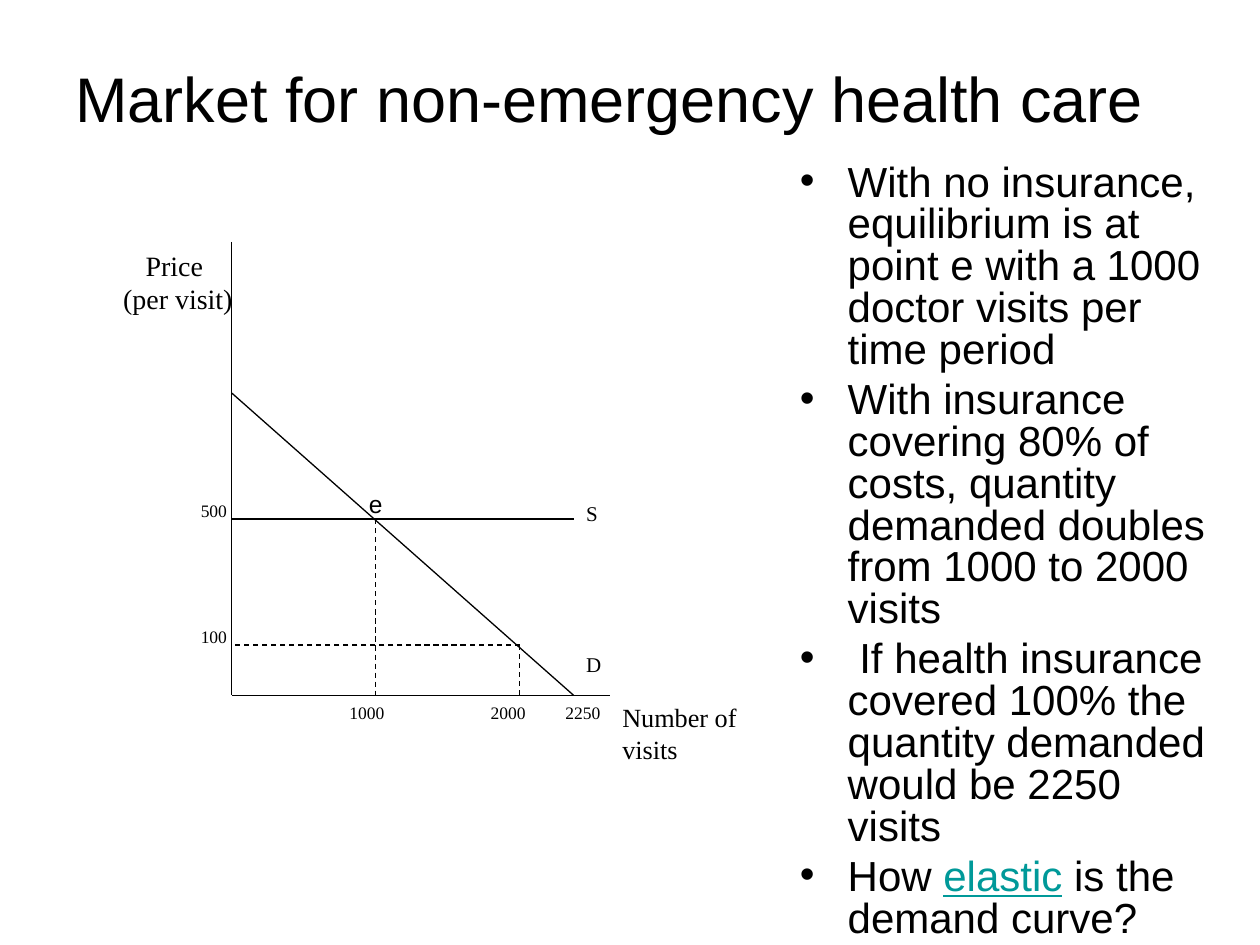
from pptx import Presentation, util as u
from pptx.dml.color import RGBColor
from pptx.enum import dml, shapes, text
from pptx.oxml.ns import qn
from lxml import etree

WIDE, HIGH = 10, 7.5
LEFT, TOP, COL, ROW = 1.84, 1.92, 1 / 7, 0.2
SANS, SERIF = "Arial", "Times New Roman"
BLACK, TEAL = "000000", "009999"
L, C, R = text.PP_ALIGN.LEFT, text.PP_ALIGN.CENTER, text.PP_ALIGN.RIGHT

TITLE = "Market for non-emergency health care"
POINTS = [
    ["With no insurance, equilibrium is at point e with a 1000 doctor visits per time period"],
    ["With insurance covering 80% of costs, quantity demanded doubles from 1000 to 2000 visits"],
    [" If health insurance covered 100% the quantity demanded would be 2250 visits"],
    ["How ", "elastic", " is the demand curve?"],
]
# (from column, row, to column, row, dashed)
LINES = [
    (0, 0, 0, 18, False),
    (0, 18, 21, 18, False),
    (0, 11, 19, 11, False),
    (0, 6, 19, 18, False),
    (8, 11, 8, 18, True),
    (16, 16, 16, 18, True),
    (16, 16, 0, 16, True),
]
# (words, column, row, columns, rows, size, alignment)
LABELS = [
    ("Number of visits", 21, 18, 11, 2, 15, L),
    ("Price \n(per visit)", -7, 0, 8, 5, 16, C),
    ("S", 19, 10, 3, 3, 12, L),
    ("D", 19, 16, 3, 2, 12, L),
    ("500", -3, 10, 4, 2, 10, C),
    ("100", -3, 15, 4, 2, 10, C),
    ("1000", 5, 18, 5, 2, 10, C),
    ("2000", 13, 18, 4, 2, 10, R),
    ("2250", 17, 18, 5, 2, 10, C),
]


def paint(code):
    return RGBColor.from_string(code)


def spot(col, row):
    return u.Inches(LEFT + col * COL), u.Inches(TOP + row * ROW)


def style(run, size, face, code=BLACK):
    run.font.size = u.Pt(size)
    run.font.name = face
    run.font.color.rgb = paint(code)


def write(slide, words, area, size, face, side=L, wrap=True):
    frame = slide.shapes.add_textbox(*area).text_frame
    frame.word_wrap = wrap
    frame.text = words
    for para in frame.paragraphs:
        para.alignment = side
        for run in para.runs:
            style(run, size, face)
    return frame


def draw(slide, x1, y1, x2, y2, dashed):
    line = slide.shapes.add_connector(
        shapes.MSO_CONNECTOR.STRAIGHT, *spot(x1, y1), *spot(x2, y2))
    line.line.color.rgb = paint(BLACK)
    line.line.width = u.Pt(0.75)
    if dashed:
        line.line.dash_style = dml.MSO_LINE.DASH
    etree.SubElement(line._element.spPr, qn("a:effectLst"))


def bullet(para):
    props = para._p.get_or_add_pPr()
    props.set("marL", str(u.Inches(0.38)))
    props.set("indent", str(u.Inches(-0.38)))
    etree.SubElement(props, qn("a:buFont")).set("typeface", SANS)
    etree.SubElement(props, qn("a:buChar")).set("char", "•")


def listing(slide, area):
    frame = slide.shapes.add_textbox(*area).text_frame
    frame.word_wrap = True
    for i, parts in enumerate(POINTS):
        para = frame.add_paragraph() if i else frame.paragraphs[0]
        para.line_spacing = 0.83
        para.space_before = u.Pt(4.8)
        bullet(para)
        for part in parts:
            run = para.add_run()
            run.text = part
            link = part == "elastic"
            style(run, 24, SANS, TEAL if link else BLACK)
            run.font.underline = link


def main():
    deck = Presentation()
    deck.slide_width, deck.slide_height = u.Inches(WIDE), u.Inches(HIGH)
    slide = deck.slides.add_slide(deck.slide_layouts[6])

    listing(slide, [u.Inches(n) for n in (6.25, 1.25, 3.5, 6.17)])
    head = write(slide, TITLE, [u.Inches(n) for n in (0.5, 0.3, 9, 0.95)], 36, SANS)
    head.vertical_anchor = text.MSO_ANCHOR.MIDDLE

    for line in LINES:
        draw(slide, *line)
    for words, col, row, cols, rows, size, side in LABELS:
        area = *spot(col, row), u.Inches(cols * COL), u.Inches(rows * ROW)
        write(slide, words, area, size, SERIF, side)
    mark = write(slide, "e", [u.Inches(n) for n in (2.83, 3.83, 0.31, 0.33)],
                 14, SANS, wrap=False)
    mark.auto_size = text.MSO_AUTO_SIZE.SHAPE_TO_FIT_TEXT

    deck.save("out.pptx")


if __name__ == "__main__":
    main()
